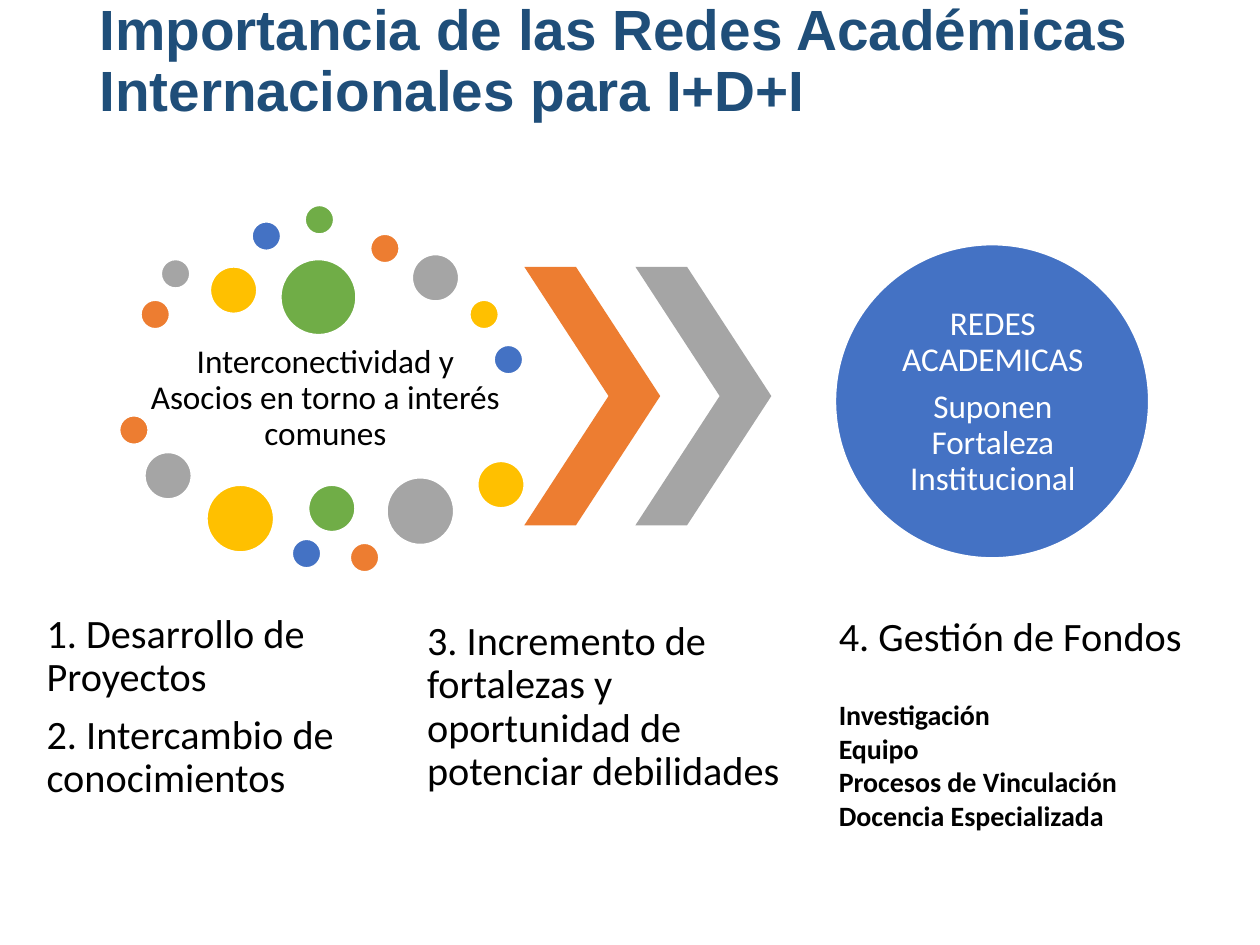
import itertools

import pptx
import pptx.dml.color
import pptx.enum.shapes
import pptx.enum.text
import pptx.util

Cm, Pt = pptx.util.Cm, pptx.util.Pt
SHAPES = pptx.enum.shapes.MSO_SHAPE
ALIGN = pptx.enum.text.PP_ALIGN
ANCHOR = pptx.enum.text.MSO_ANCHOR

COLORS = {
    "navy": "1F4E79", "black": "000000", "white": "FFFFFF",
    "orange": "ED7D31", "gray": "A5A5A5", "yellow": "FFC000",
    "blue": "4472C4", "green": "70AD47",
}
DOT_CYCLE = ["orange", "gray", "yellow", "blue", "green"]

# Content (lengths in cm)
TITLE = "Importancia de las Redes Académicas Internacionales para I+D+I"
DIAMETERS = {"S": 0.58, "M": 0.94, "L": 1.35, "XL": 1.52}
DOTS = [  # left, top, size
    (2.84, 6.05, "S"), (3.25, 5.23, "S"), (4.24, 5.38, "M"),
    (5.08, 4.47, "S"), (6.15, 4.14, "S"), (7.47, 4.72, "S"),
    (8.31, 5.13, "M"), (9.47, 6.05, "S"), (9.96, 6.96, "S"),
    (5.66, 5.23, "XL"), (2.41, 8.38, "S"), (2.92, 9.12, "M"),
    (4.17, 9.78, "L"), (5.89, 10.87, "S"), (6.22, 9.78, "M"),
    (7.06, 10.95, "S"), (7.8, 9.63, "L"), (9.63, 9.3, "M"),
]
CHEVRONS = ["orange", "gray"]
CHEVRON_LEFT, CHEVRON_STEP = 10.57, 2.24
CIRCLE = (16.84, 4.93, 6.32, 6.32)

# Text boxes: place, paragraphs, size, colour, alignment, inset
TEXTS = [
    ((2.84, 6.81, 7.44, 2.46),
     ["Interconectividad y Asocios en torno a interés comunes"],
     19, "black", ALIGN.CENTER, 0.08),
    ((17.78, 5.87, 4.47, 4.47),
     ["REDES ACADEMICAS", "Suponen Fortaleza Institucional"],
     19, "white", ALIGN.CENTER, 0),
    ((0.86, 11.96, 7.44, 4.6),
     ["1. Desarrollo de Proyectos", "2. Intercambio de conocimientos"],
     23, "black", ALIGN.LEFT, 0.08),
    ((8.53, 11.96, 7.44, 4.6),
     ["3. Incremento de fortalezas y oportunidad de potenciar debilidades"],
     23, "black", ALIGN.LEFT, 0.08),
]
FUNDS_PLACE = (16.66, 12.19, 8.41, 4.83)
FUNDS_HEADING = "4. Gestión de Fondos"
FUNDS_ITEMS = ["Investigación", "Equipo", "Procesos de Vinculación",
               "Docencia Especializada"]


def rgb(name):
    return pptx.dml.color.RGBColor.from_string(COLORS[name])


def add_span(para, text, size, color, font="Calibri", bold=False):
    span = para.add_run()
    span.text = text
    span.font.name = font
    span.font.size = Pt(size)
    span.font.bold = bold
    span.font.color.rgb = rgb(color)


def add_figure(slide, kind, place, color, outlined=True):
    figure = slide.shapes.add_shape(kind, *map(Cm, place))
    figure.shadow.inherit = False
    figure.fill.solid()
    figure.fill.fore_color.rgb = rgb(color)
    if outlined:
        figure.line.color.rgb = rgb("white")
        figure.line.width = Pt(1)
    else:
        figure.line.fill.background()
    return figure


def add_box(slide, place):
    frame = slide.shapes.add_textbox(*map(Cm, place)).text_frame
    frame.word_wrap = True
    return frame


def next_para(frame, index):
    return frame.add_paragraph() if index else frame.paragraphs[0]


def add_text(slide, place, lines, size, color, align, inset):
    frame = add_box(slide, place)
    frame.vertical_anchor = ANCHOR.MIDDLE
    frame.margin_left = frame.margin_right = Cm(inset)
    frame.margin_top = frame.margin_bottom = Cm(inset)
    for index, line in enumerate(lines):
        para = next_para(frame, index)
        para.alignment = align
        para.line_spacing = 0.9
        para.space_after = Pt(round(size * 0.35, 1))
        add_span(para, line, size, color)


def main():
    deck = pptx.Presentation()
    deck.slide_width, deck.slide_height = Cm(25.4), Cm(19.05)
    slide = deck.slides.add_slide(deck.slide_layouts[5])

    # Title
    title = slide.shapes.title
    title.left, title.top, title.width, title.height = map(
        Cm, (1.75, -0.58, 21.89, 3.68))
    title.text_frame.vertical_anchor = ANCHOR.MIDDLE
    title.text_frame.auto_size = pptx.enum.text.MSO_AUTO_SIZE.NONE
    para = title.text_frame.paragraphs[0]
    para.alignment = ALIGN.LEFT
    para.line_spacing = 0.9
    add_span(para, TITLE, 32.4, "navy", "Arial", True)

    # Ring of dots
    for (left, top, size), color in zip(DOTS, itertools.cycle(DOT_CYCLE)):
        diameter = DIAMETERS[size]
        add_figure(slide, SHAPES.OVAL, (left, top, diameter, diameter), color)

    # Chevrons leading to the circle
    for index, color in enumerate(CHEVRONS):
        left = CHEVRON_LEFT + index * CHEVRON_STEP
        chevron = add_figure(slide, SHAPES.CHEVRON, (left, 5.38, 2.74, 5.21),
                             color, outlined=False)
        chevron.adjustments[0] = 0.62
    add_figure(slide, SHAPES.OVAL, CIRCLE, "blue")

    # Diagram texts
    for text in TEXTS:
        add_text(slide, *text)

    # Funds list
    frame = add_box(slide, FUNDS_PLACE)
    add_span(frame.paragraphs[0], FUNDS_HEADING, 23, "black")
    frame.paragraphs[0].space_after = Pt(22)
    for item in FUNDS_ITEMS:
        add_span(frame.add_paragraph(), item, 16, "black", bold=True)

    deck.save("out.pptx")


if __name__ == "__main__":
    main()
